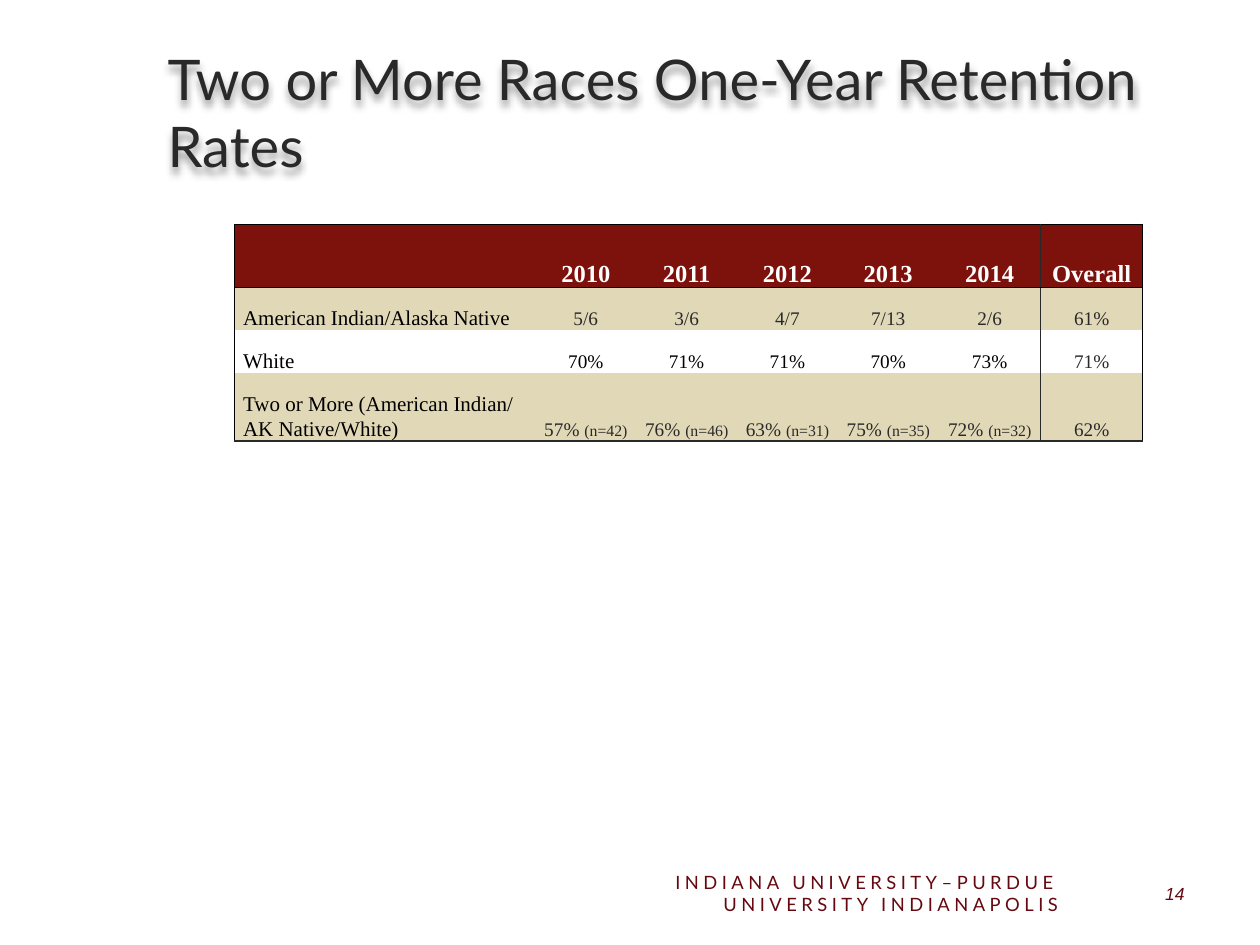
from lxml import etree
from pptx import Presentation
from pptx.dml.color import RGBColor
from pptx.enum.text import MSO_ANCHOR, MSO_AUTO_SIZE, PP_ALIGN
from pptx.oxml.ns import qn
from pptx.util import Inches, Pt

LEFT, CENTER, RIGHT = PP_ALIGN.LEFT, PP_ALIGN.CENTER, PP_ALIGN.RIGHT
MIDDLE, BOTTOM = MSO_ANCHOR.MIDDLE, MSO_ANCHOR.BOTTOM

CHARCOAL = RGBColor(0x29, 0x29, 0x29)
BLACK = RGBColor(0, 0, 0)
WHITE = RGBColor(0xFF, 0xFF, 0xFF)
CRIMSON = RGBColor(0x7D, 0x11, 0x0C)
MAROON = RGBColor(0x66, 0x08, 0x0F)
TAN = RGBColor(0xE1, 0xD8, 0xB7)

TITLE = "Two or More Races One-Year Retention Rates"
FOOTER = "INDIANA UNIVERSITY–PURDUE UNIVERSITY INDIANAPOLIS"
PAGE_NUMBER = "14"

HEADINGS = ["", "2010", "2011", "2012", "2013", "2014", "Overall"]
RATES = [
    ["American Indian/Alaska Native", "5/6", "3/6", "4/7", "7/13", "2/6", "61%"],
    ["White", "70%", "71%", "71%", "70%", "73%", "71%"],
    ["Two or More (American Indian/ AK Native/White)",
     "57% (n=42)", "76% (n=46)", "63% (n=31)", "75% (n=35)", "72% (n=32)", "62%"],
]
COLUMN_WIDTHS = [2.39] + [0.8] * 4 + [0.81] * 2
ROW_HEIGHTS = [0.5, 0.34, 0.34, 0.54]
ROW_FILLS = [CRIMSON, TAN, WHITE, TAN]
TABLE_LEFT, TABLE_TOP = 1.86, 1.78
FOOTER_TOP, FOOTER_HEIGHT = 6.89, 0.4


def set_font(font, name, size, color, bold=False, italic=False):
    font.name, font.size, font.bold, font.italic = name, Pt(size), bold, italic
    font.color.rgb = color


def add_soft_shadow(shape):
    effects = etree.SubElement(shape._element.spPr, qn("a:effectLst"))
    shadow = etree.SubElement(effects, qn("a:outerShdw"), blurRad="50800",
                              dist="38100", dir="5400000", algn="t", rotWithShape="0")
    color = etree.SubElement(shadow, qn("a:srgbClr"), val="000000")
    etree.SubElement(color, qn("a:alpha"), val="40000")


def add_footer_text(page, text, left, width, font_name, size, italic=False):
    box = page.shapes.add_textbox(Inches(left), Inches(FOOTER_TOP),
                                  Inches(width), Inches(FOOTER_HEIGHT))
    frame = box.text_frame
    frame.word_wrap, frame.vertical_anchor = True, MIDDLE
    para = frame.paragraphs[0]
    para.alignment = RIGHT
    span = para.add_run()
    span.text = text
    set_font(para.font, font_name, size, MAROON, italic=italic)
    return span


def set_borders(cell, colors):
    """Draw one-point borders on the sides in colors and clear the others."""
    properties = cell._tc.get_or_add_tcPr()
    for position, side in enumerate("LRTB"):
        line = etree.Element(qn(f"a:ln{side}"), w=str(Pt(1)))
        if side in colors:
            fill = etree.SubElement(line, qn("a:solidFill"))
            etree.SubElement(fill, qn("a:srgbClr"), val=str(colors[side]))
        else:
            etree.SubElement(line, qn("a:noFill"))
        properties.insert(position, line)


def border_colors(row, column):
    last_row, last_column = len(RATES), len(HEADINGS) - 1
    colors = {}
    if row <= 1:
        colors["T"] = BLACK
    if row == 0:
        colors["B"] = BLACK
    if row == last_row:
        colors["B"] = CHARCOAL
    if column == 0:
        colors["L"] = BLACK
    if column == last_column - 1:
        colors["R"] = CHARCOAL
    if column == last_column:
        colors.update(L=CHARCOAL, R=BLACK)
    return colors


def fill_cell(cell, text, row, column):
    cell.fill.solid()
    cell.fill.fore_color.rgb = ROW_FILLS[row]
    cell.vertical_anchor = BOTTOM
    cell.margin_left = cell.margin_right = Inches(0.07)
    cell.margin_top = cell.margin_bottom = 0
    para = cell.text_frame.paragraphs[0]
    para.alignment = LEFT if column == 0 else CENTER
    para.line_spacing = 1.07
    if row == 0:
        size, color = 14, WHITE
    elif column == 0:
        size, color = 12, BLACK
    else:
        is_white_rate = row == 2 and column < len(HEADINGS) - 1
        size, color = 11, BLACK if is_white_rate else CHARCOAL
    rate, bracket, count = text.partition("(n=")
    if column and bracket:
        para.add_run().text = rate
        sample = para.add_run()
        sample.text = bracket + count
        sample.font.size = Pt(9)
    else:
        para.add_run().text = text
    set_font(para.font, "Times New Roman", size, color, bold=row == 0)
    set_borders(cell, border_colors(row, column))


def add_rates_table(page):
    rows = [HEADINGS] + RATES
    table = page.shapes.add_table(
        len(rows), len(HEADINGS), Inches(TABLE_LEFT), Inches(TABLE_TOP),
        Inches(sum(COLUMN_WIDTHS)), Inches(sum(ROW_HEIGHTS))).table
    table.first_row = table.horz_banding = False
    for column, width in zip(table.columns, COLUMN_WIDTHS):
        column.width = Inches(width)
    for row, height in zip(table.rows, ROW_HEIGHTS):
        row.height = Inches(height)
    for row, texts in enumerate(rows):
        for column, text in enumerate(texts):
            fill_cell(table.cell(row, column), text, row, column)


def main():
    deck = Presentation()
    deck.slide_width, deck.slide_height = Inches(10), Inches(7.5)
    page = deck.slides.add_slide(deck.slide_layouts[5])

    title = page.shapes.title
    title.left, title.top = Inches(1.23), Inches(0.3)
    title.width, title.height = Inches(8.67), Inches(1.17)
    title.text = TITLE
    title.text_frame.auto_size = MSO_AUTO_SIZE.NONE
    title.text_frame.vertical_anchor = MIDDLE
    heading = title.text_frame.paragraphs[0]
    heading.alignment = LEFT
    set_font(heading.font, "Lato", 32, CHARCOAL)
    add_soft_shadow(title)

    add_rates_table(page)
    footer = add_footer_text(page, FOOTER, 4.04, 4.46, "Lato", 10.5)
    footer.font._element.set("spc", "260")
    add_footer_text(page, PAGE_NUMBER, 8.6, 0.9, "Arial", 10, italic=True)
    deck.save("out.pptx")


if __name__ == "__main__":
    main()
